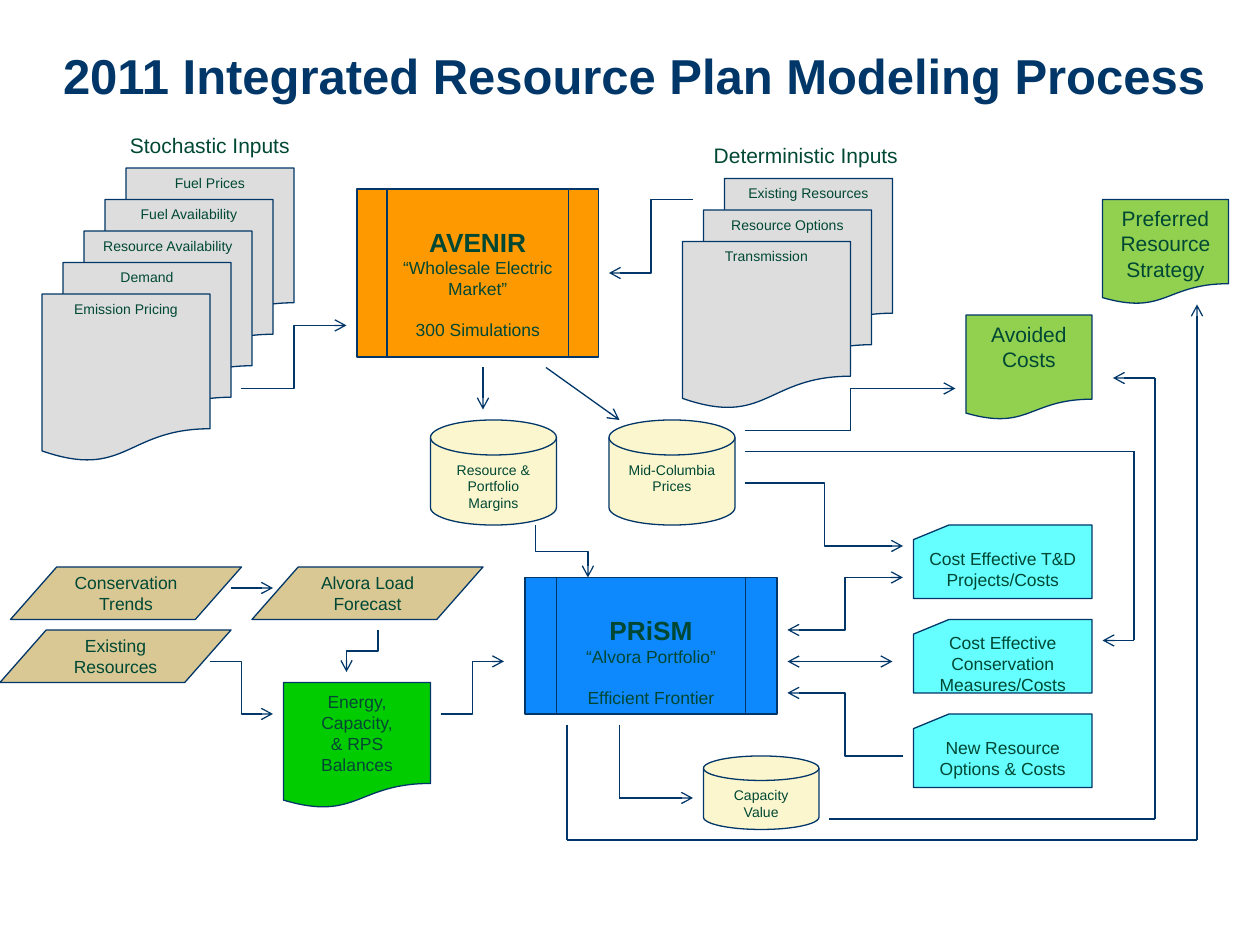
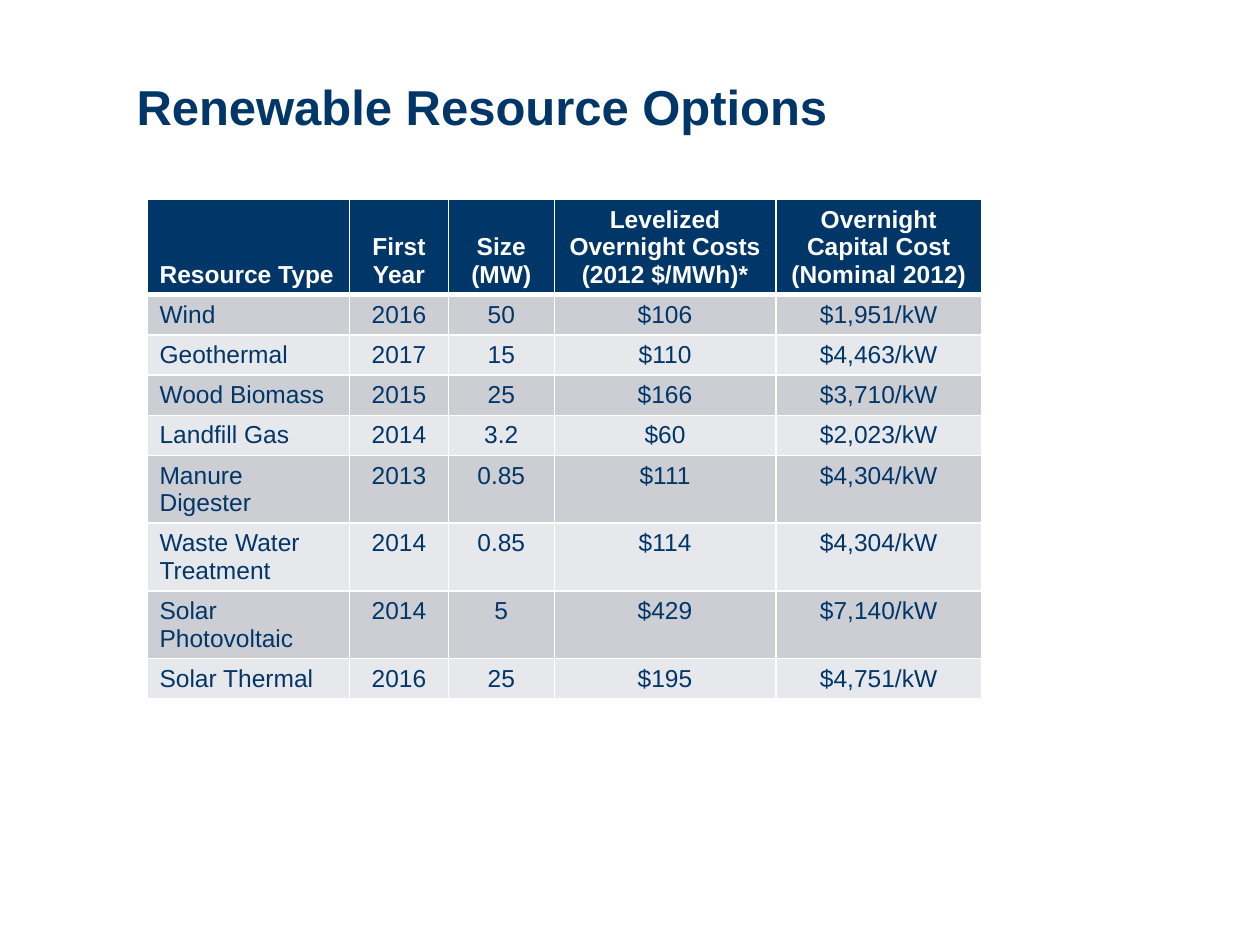
from pptx import Presentation
from pptx.dml.color import RGBColor
from pptx.enum.shapes import MSO_CONNECTOR as LINK, MSO_SHAPE as SHAPE
from pptx.enum.text import MSO_ANCHOR as ANCHOR, MSO_AUTO_SIZE as AUTO_SIZE, PP_ALIGN as ALIGN
from pptx.oxml.ns import qn
from pptx.util import Pt
from lxml.etree import SubElement

PX = 7620  # 120 px to the inch
FONT = "Arial"
NAVY = RGBColor(0x01, 0x36, 0x68)
DARK_GREEN = RGBColor(0x00, 0x48, 0x34)
WHITE = RGBColor(0xFF, 0xFF, 0xFF)
GREY = RGBColor(0xDD, 0xDD, 0xDD)
ORANGE = RGBColor(0xFF, 0x99, 0x00)
BLUE = RGBColor(0x0E, 0x89, 0xFD)
LIME = RGBColor(0x92, 0xD0, 0x50)
GREEN = RGBColor(0x00, 0xCC, 0x00)
CREAM = RGBColor(0xFB, 0xF6, 0xCD)
TAN = RGBColor(0xD9, 0xC8, 0x94)
CYAN = RGBColor(0x66, 0xFF, 0xFF)
BAND_DARK = RGBColor(0xCC, 0xCE, 0xD4)
BAND_LIGHT = RGBColor(0xE7, 0xE8, 0xEB)


def add_block(slide, kind, box, fill, text, size, anchor=ANCHOR.TOP):
    """Add an outlined flowchart shape with centred text, one paragraph a line."""
    shape = slide.shapes.add_shape(kind, *(value * PX for value in box))
    shape.shadow.inherit = False
    shape.fill.solid()
    shape.fill.fore_color.rgb = fill
    shape.line.color.rgb = NAVY
    shape.line.width = Pt(0.75)
    frame = shape.text_frame
    frame.word_wrap = True
    frame.vertical_anchor = anchor
    frame.text = text
    for paragraph in frame.paragraphs:
        paragraph.alignment = ALIGN.CENTER
        paragraph.font.name = FONT
        paragraph.font.size = Pt(size)
        paragraph.font.color.rgb = DARK_GREEN
    return shape


def add_link(slide, kind, ends, arrows=("tailEnd",)):
    """Add a connector from (x1, y1) to (x2, y2) with open arrowheads."""
    connector = slide.shapes.add_connector(kind, *(int(value * PX) for value in ends))
    connector.line.color.rgb = NAVY
    connector.line.width = Pt(0.75)
    properties = connector.element.spPr
    for arrow in arrows:
        SubElement(properties.find(qn("a:ln")), qn(f"a:{arrow}"), type="arrow")
    SubElement(properties, qn("a:effectLst"))
    return connector


presentation = Presentation()
presentation.slide_width = 1200 * PX
presentation.slide_height = 900 * PX

# Titles
slides = []
for text, box in (
    ("2011 Integrated Resource Plan Modeling Process", (60, 14, 1100, 85)),
    ("Renewable Resource Options", (130, 14, 1010, 115)),
):
    slide = presentation.slides.add_slide(presentation.slide_layouts[5])
    title = slide.shapes.title
    title.left, title.top, title.width, title.height = (value * PX for value in box)
    frame = title.text_frame
    frame.text = text
    frame.auto_size = AUTO_SIZE.NONE
    frame.vertical_anchor = ANCHOR.BOTTOM
    frame.margin_left = frame.margin_top = frame.margin_right = frame.margin_bottom = 0
    paragraph = frame.paragraphs[0]
    paragraph.alignment = ALIGN.LEFT
    paragraph.line_spacing = Pt(27)
    paragraph.font.name = FONT
    paragraph.font.size = Pt(28)
    paragraph.font.bold = True
    paragraph.font.color.rgb = NAVY
    slides.append(slide)
process_slide, options_slide = slides

# Models
for box, fill, text in (
    ((340, 180, 230, 160), ORANGE, "AVENIR\n“Wholesale Electric Market”\n300 Simulations"),
    ((500, 550, 240, 130), BLUE, "PRiSM\n“Alvora Portfolio”\nEfficient Frontier"),
):
    model = add_block(process_slide, SHAPE.FLOWCHART_PREDEFINED_PROCESS, box, fill, text, 10)
    model.text_frame.margin_top = 35 * PX
    name, market, result = model.text_frame.paragraphs
    name.font.size = Pt(15)
    name.font.bold = True
    result.space_before = Pt(11.5)

# Stacks of input documents, each stepping down and to the left
for heading, heading_box, left, top, inputs in (
    ("Stochastic Inputs", (112, 120, 178, 36), 120, 160,
     ("Fuel Prices", "Fuel Availability", "Resource Availability", "Demand", "Emission Pricing")),
    ("Deterministic Inputs", (668, 130, 202, 36), 690, 170,
     ("Existing Resources", "Resource Options", "Transmission")),
):
    label = process_slide.shapes.add_textbox(*(value * PX for value in heading_box))
    label.text_frame.word_wrap = False
    label.text_frame.text = heading
    paragraph = label.text_frame.paragraphs[0]
    paragraph.font.name = FONT
    paragraph.font.size = Pt(12)
    paragraph.font.color.rgb = DARK_GREEN
    for index, text in enumerate(inputs):
        box = (left - 20 * index, top + 30 * index, 160, 160)
        add_block(process_slide, SHAPE.FLOWCHART_DOCUMENT, box, GREY, text, 8)

# Results, data stores, load inputs and resource costs
for box, text in (
    ((1050, 190, 120, 100), "Preferred Resource Strategy"),
    ((920, 300, 120, 100), "Avoided Costs"),
):
    add_block(process_slide, SHAPE.FLOWCHART_DOCUMENT, box, LIME, text, 12)
add_block(process_slide, SHAPE.FLOWCHART_DOCUMENT, (270, 650, 140, 120), GREEN,
          "Energy,\nCapacity,\n& RPS Balances", 10, ANCHOR.MIDDLE)
for box, text in (
    ((410, 400, 120, 100), "Resource & Portfolio Margins"),
    ((580, 400, 120, 100), "Mid-Columbia Prices"),
    ((670, 720, 110, 70), "Capacity Value"),
):
    add_block(process_slide, SHAPE.FLOWCHART_MAGNETIC_DISK, box, CREAM, text, 8)
for left, top, text in (
    (10, 540, "Conservation Trends"),
    (0, 600, "Existing Resources"),
    (240, 540, "Alvora Load Forecast"),
):
    add_block(process_slide, SHAPE.FLOWCHART_DATA, (left, top, 220, 50), TAN, text, 10,
              ANCHOR.MIDDLE)
for index, text in enumerate((
    "Cost Effective T&D\nProjects/Costs",
    "Cost Effective Conservation Measures/Costs",
    "New Resource Options & Costs",
)):
    add_block(process_slide, SHAPE.FLOWCHART_CARD, (870, 500 + 90 * index, 170, 70), CYAN,
              text, 10, ANCHOR.MIDDLE)

# Straight arrows and elbows that leave sideways
for ends in ((220, 560, 260, 560), (520, 350, 590, 400), (460, 350, 460, 390)):
    add_link(process_slide, LINK.STRAIGHT, ends)
for ends in (
    (200, 630, 260, 680), (420, 680, 480, 630), (860, 720, 750, 660), (230, 370, 330, 310),
    (660, 190, 580, 260), (710, 410, 910, 370), (710, 460, 860, 520),
):
    add_link(process_slide, LINK.ELBOW, ends)
both_ends = ("headEnd", "tailEnd")
add_link(process_slide, LINK.ELBOW, (860, 550, 750, 600), both_ends)
add_link(process_slide, LINK.STRAIGHT, (850, 630, 750, 630), both_ends)

# Elbows that leave downwards: laid out sideways, then turned by 90 degrees
for x1, y1, x2, y2 in ((360, 600, 330, 640), (510, 500, 560, 550)):
    middle_x, middle_y = (x1 + x2) / 2, (y1 + y2) / 2
    half_width, half_height = (y2 - y1) / 2, (x2 - x1) / 2
    elbow = add_link(process_slide, LINK.ELBOW, (
        middle_x - half_width, middle_y + half_height,
        middle_x + half_width, middle_y - half_height))
    elbow.element.spPr.xfrm.set("rot", "5400000")

# Longer routes, with the arrowhead on the last leg
for route in (
    ((710, 430), (1080, 430), (1080, 610), (1050, 610)),
    ((540, 690), (540, 800), (1140, 800), (1140, 290)),
    ((790, 780), (1100, 780), (1100, 360), (1060, 360)),
    ((590, 690), (590, 760), (660, 760)),
):
    for start, end in zip(route, route[1:]):
        add_link(process_slide, LINK.STRAIGHT, start + end,
                 ("tailEnd",) if end == route[-1] else ())

# Table of renewable resources
rows = (
    ("Resource Type", "First Year", "Size (MW)", "Levelized\nOvernight Costs\n(2012 $/MWh)*",
     "Overnight\nCapital Cost\n(Nominal 2012)"),
    ("Wind", "2016", "50", "$106", "$1,951/kW"),
    ("Geothermal", "2017", "15", "$110", "$4,463/kW"),
    ("Wood Biomass", "2015", "25", "$166", "$3,710/kW"),
    ("Landfill Gas", "2014", "3.2", "$60", "$2,023/kW"),
    ("Manure Digester", "2013", "0.85", "$111", "$4,304/kW"),
    ("Waste Water Treatment", "2014", "0.85", "$114", "$4,304/kW"),
    ("Solar Photovoltaic", "2014", "5", "$429", "$7,140/kW"),
    ("Solar Thermal", "2016", "25", "$195", "$4,751/kW"),
)
column_widths = (193, 94, 101, 211, 196)
row_heights = (90, 38, 38, 38, 38, 64, 64, 64, 38)
table = options_slide.shapes.add_table(
    len(rows), len(column_widths), 140 * PX, 190 * PX,
    sum(column_widths) * PX, sum(row_heights) * PX).table
for column, width in zip(table.columns, column_widths):
    column.width = width * PX
for row, height in zip(table.rows, row_heights):
    row.height = height * PX

for row_index, texts in enumerate(rows):
    is_header = row_index == 0
    for column_index, text in enumerate(texts):
        cell = table.cell(row_index, column_index)
        cell.text = text
        cell.vertical_anchor = ANCHOR.BOTTOM if is_header else ANCHOR.TOP
        for paragraph in cell.text_frame.paragraphs:
            paragraph.alignment = ALIGN.CENTER if column_index else ALIGN.LEFT
            paragraph.font.name = FONT
            paragraph.font.size = Pt(14)
            paragraph.font.bold = is_header
            paragraph.font.color.rgb = WHITE if is_header else NAVY
        cell_properties = cell._tc.get_or_add_tcPr()
        for side in "LRTB":
            under_header = (row_index, side) in ((0, "B"), (1, "T"))
            border = SubElement(cell_properties, qn(f"a:ln{side}"),
                                w=str(Pt(3 if under_header else 1)))
            SubElement(SubElement(border, qn("a:solidFill")), qn("a:srgbClr"), val=str(WHITE))
        cell.fill.solid()
        cell.fill.fore_color.rgb = (
            NAVY if is_header else BAND_DARK if row_index % 2 else BAND_LIGHT)

presentation.save("out.pptx")
